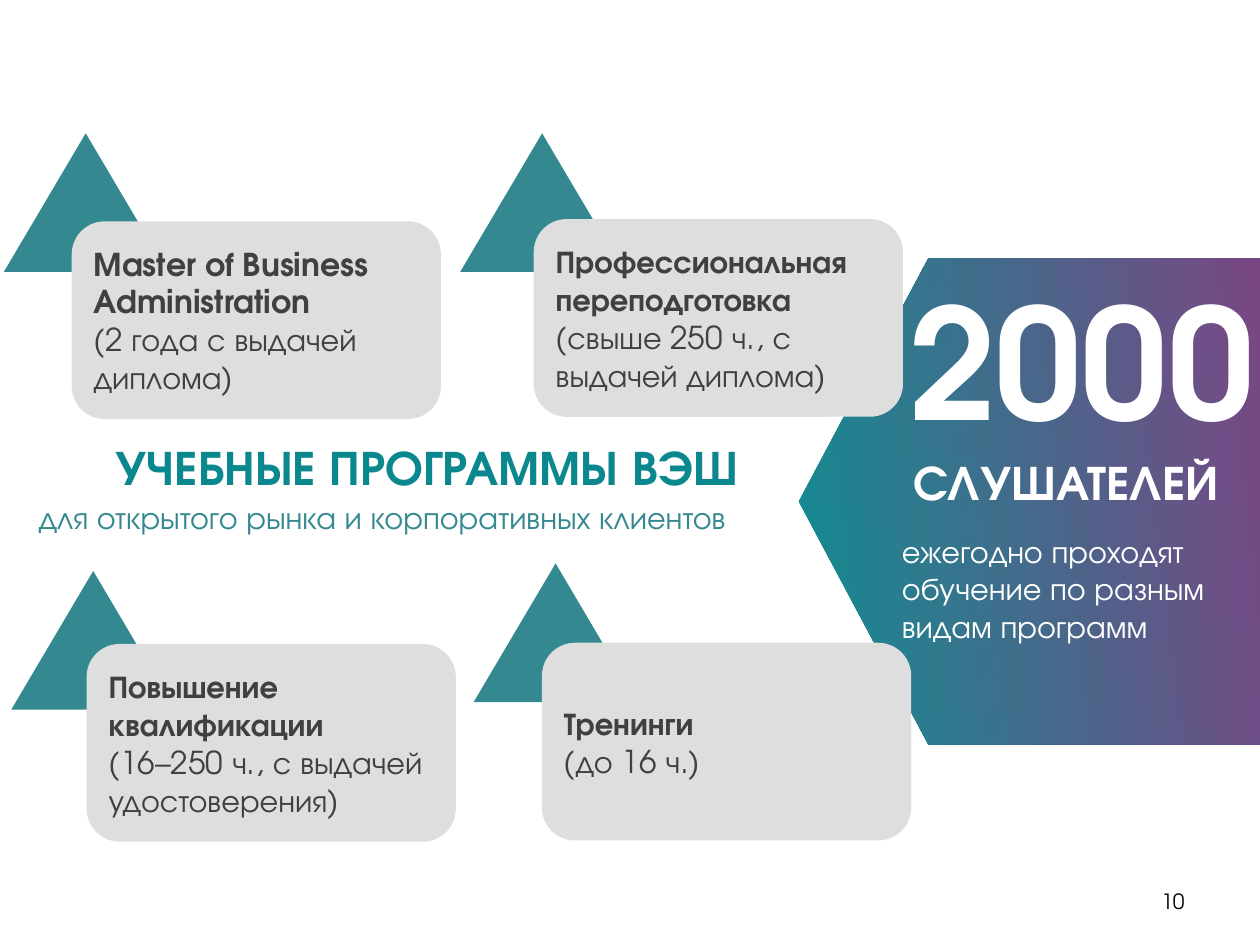
from pptx import Presentation
from pptx import util as u
from pptx.dml import color
from pptx.enum import shapes, text

Pt = u.Pt
FONT = "TeX Gyre Adventor"
TEAL, WHITE, GREY, DARK = "348990", "FFFFFF", "DEDEDE", "404040"


def rgb(value):
    return color.RGBColor.from_string(value)


class SlideBuilder:
    """Holds the style and the current slide; all lengths are in points."""

    def __init__(self, slide):
        self.slide = slide
        self.base = {"name": FONT, "size": 18, "bold": False}

    def add_words(self, paragraph, words, hex_color, align=text.PP_ALIGN.LEFT, **changes):
        paragraph.alignment = align
        run = paragraph.add_run()
        run.text = words
        values = {**self.base, **changes}
        values["size"] = Pt(values["size"])
        for name, value in values.items():
            setattr(run.font, name, value)
        run.font.color.rgb = rgb(hex_color)

    def label(self, box, words, hex_color, align=text.PP_ALIGN.LEFT,
              anchor=text.MSO_ANCHOR.TOP, **changes):
        shape = self.slide.shapes.add_textbox(*map(Pt, box))
        frame = shape.text_frame
        frame.word_wrap = True
        frame.vertical_anchor = anchor
        if anchor == text.MSO_ANCHOR.TOP:
            frame.auto_size = text.MSO_AUTO_SIZE.SHAPE_TO_FIT_TEXT
        self.add_words(frame.paragraphs[0], words, hex_color, align, **changes)

    def preset(self, kind, box, hex_color):
        shape = self.slide.shapes.add_shape(kind, *map(Pt, box))
        shape.shadow.inherit = False
        shape.fill.solid()
        shape.fill.fore_color.rgb = rgb(hex_color)
        shape.line.fill.background()
        return shape

    def card(self, left, top, heading, detail):
        shape = self.preset(shapes.MSO_SHAPE.ROUNDED_RECTANGLE,
                            (left, top, 211, 113), GREY)
        frame = shape.text_frame
        frame.word_wrap = True
        frame.vertical_anchor = text.MSO_ANCHOR.MIDDLE
        self.add_words(frame.paragraphs[0], heading, DARK, bold=True)
        self.add_words(frame.add_paragraph(), detail, DARK)

    def gradient_outline(self, points, hex_colors, angle):
        start, *others = [(Pt(x), Pt(y)) for x, y in points]
        builder = self.slide.shapes.build_freeform(*start)
        builder.add_line_segments(others, close=True)
        shape = builder.convert_to_shape()
        shape.shadow.inherit = False
        shape.line.fill.background()
        shape.fill.gradient()
        shape.fill.gradient_angle = angle
        for stop, position, hex_color in zip(shape.fill.gradient_stops, (0, 1), hex_colors):
            stop.position = position
            stop.color.rgb = rgb(hex_color)


def main():
    presentation = Presentation()
    presentation.slide_width, presentation.slide_height = Pt(720), Pt(540)
    page = SlideBuilder(presentation.slides.add_slide(presentation.slide_layouts[6]))

    # Gradient arrow on the right
    page.gradient_outline(
        [(530.6, 147.6), (722.9, 147.6), (722.9, 425.5), (530.6, 425.5), (456.5, 286.6)],
        ("128C91", "7A4684"), 7)

    # Programme cards, each with a triangle behind it
    programmes = [
        ((2.2, 76.2), (41, 126.5), "Master of Business Administration",
         "(2 года с выдачей диплома)"),
        ((263, 76.2), (305, 125.2), "Профессиональная переподготовка",
         "(свыше 250 ч., с выдачей диплома)"),
        ((6.5, 326.3), (49.5, 368), "Повышение квалификации",
         "(16–250 ч., с выдачей удостоверения)"),
        ((270.7, 322), (309.7, 367.3), "Тренинги", "(до 16 ч.)"),
    ]
    for triangle, card, heading, detail in programmes:
        page.preset(shapes.MSO_SHAPE.ISOSCELES_TRIANGLE, (*triangle, 93.6, 79.2), TEAL)
        page.card(*card, heading, detail)

    # Title and subtitle
    middle = text.MSO_ANCHOR.MIDDLE
    page.label((-48.2, 232, 584, 68.4), "УЧЕБНЫЕ ПРОГРАММЫ ВЭШ", "0B878E",
               text.PP_ALIGN.CENTER, middle, size=28, bold=True)
    page.label((15, 281, 512.6, 29), "для открытого рынка и корпоративных клиентов", TEAL)

    # Audience figure
    page.label((512.6, 149, 244, 114), "2000", WHITE, size=88, bold=True)
    page.label((514.8, 254.2, 240, 41), "СЛУШАТЕЛЕЙ", WHITE, size=28, bold=True)
    page.label((508.3, 300.2, 225.4, 72.7),
               "ежегодно проходят обучение по разным видам программ", WHITE)

    # Page number
    page.label((516.2, 500.4, 167.8, 28.8), "10", "000000",
               text.PP_ALIGN.RIGHT, middle, size=12)

    presentation.save("out.pptx")


if __name__ == "__main__":
    main()
